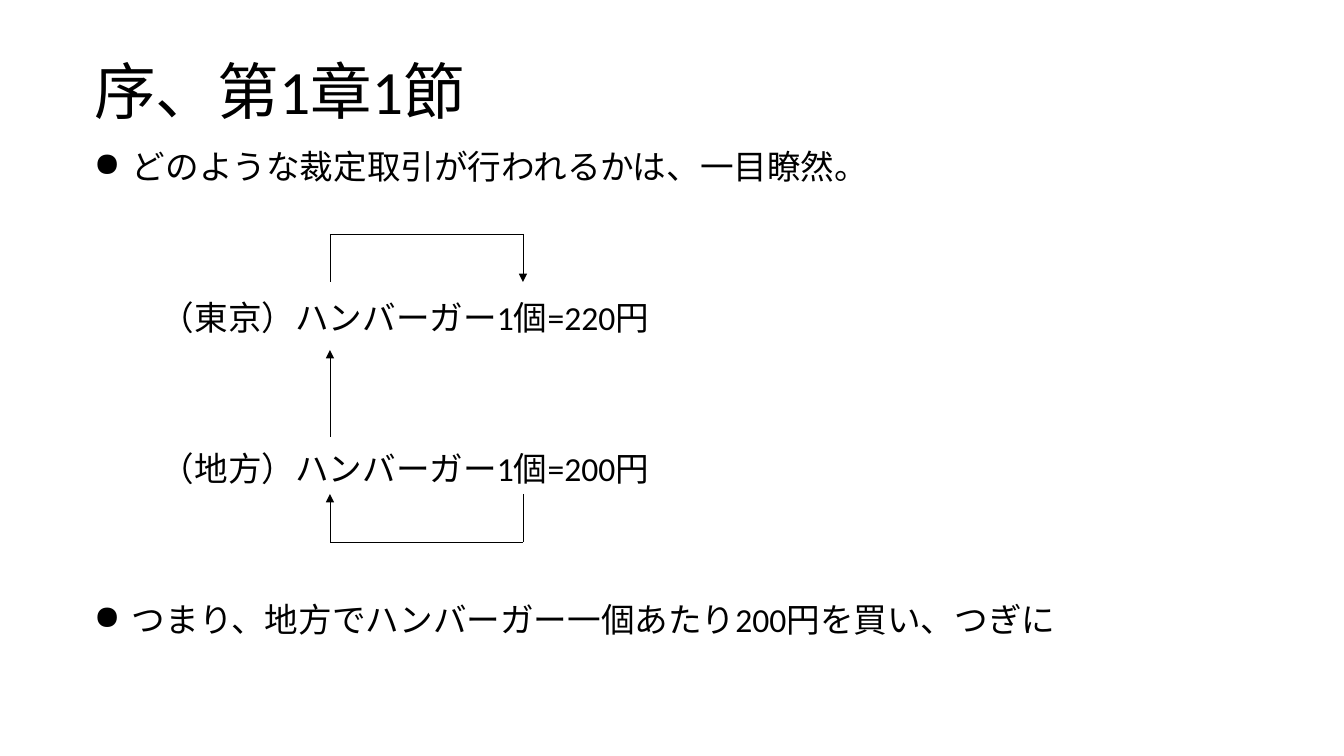
import itertools

import pptx
import pptx.dml.color
import pptx.enum.shapes
import pptx.enum.text
import pptx.oxml
import pptx.oxml.ns
import pptx.util

PX = 914400 / 100.8
BLACK = pptx.dml.color.RGBColor(0, 0, 0)
FONT = "Calibri"
BULLET_INDENT = 38
PRICE_INDENT = 67
LINES = [
    ("どのような裁定取引が行われるかは、一目瞭然。", True, 10),
    ("（東京）ハンバーガー1個=220円", False, 82),
    ("（地方）ハンバーガー1個=200円", False, 82),
    ("つまり、地方でハンバーガー一個あたり200円を買い、つぎに", True, 82),
]


def px(n):
    """Turn pixels into EMU."""
    return pptx.util.Emu(round(n * PX))


def add_xml(parent, tag, **attrs):
    """Append an empty DrawingML element with the given attributes."""
    el = pptx.oxml.parse_xml(f"<{tag} {pptx.oxml.ns.nsdecls('a')}/>")
    for name, value in attrs.items():
        el.set(name, str(value))
    parent.append(el)


def style_paragraph(p, text, size):
    """Fill a paragraph with black left-aligned text."""
    p.text = text
    p.alignment = pptx.enum.text.PP_ALIGN.LEFT
    p.line_spacing = 0.9
    p.font.name = FONT
    p.font.size = pptx.util.Pt(size)
    p.font.color.rgb = BLACK


def add_title(slide, x, y, w, h):
    """Place and format the title placeholder."""
    sp = slide.shapes.title
    sp.left, sp.top, sp.width, sp.height = map(px, (x, y, w, h))
    tf = sp.text_frame
    tf.auto_size = pptx.enum.text.MSO_AUTO_SIZE.NONE
    tf.vertical_anchor = pptx.enum.text.MSO_ANCHOR.MIDDLE
    style_paragraph(tf.paragraphs[0], "序、第1章1節", 44)


def add_body(slide, x, y, w, h):
    """Add the bulleted remarks and the indented price lines."""
    tf = slide.shapes.add_textbox(*map(px, (x, y, w, h))).text_frame
    tf.word_wrap = True
    for i, (text, bulleted, gap) in enumerate(LINES):
        p = tf.add_paragraph() if i else tf.paragraphs[0]
        style_paragraph(p, text, 24)
        p.space_before = pptx.util.Pt(gap)
        pPr = p._p.get_or_add_pPr()
        pPr.set("marL", str(px(BULLET_INDENT if bulleted else PRICE_INDENT)))
        pPr.set("indent", str(px(-BULLET_INDENT if bulleted else 0)))
        if bulleted:
            add_xml(pPr, "a:buChar", char="●")
            pPr.insert_element_before(pPr[-1], "a:defRPr")


def add_arrow_path(slide, points):
    """Join the points with thin lines, ending in an arrowhead."""
    for start, end in itertools.pairwise(points):
        line = slide.shapes.add_connector(
            pptx.enum.shapes.MSO_CONNECTOR.STRAIGHT, *map(px, start + end))
        line.line.color.rgb = BLACK
        line.line.width = pptx.util.Pt(0.5)
        if end == points[-1]:
            add_xml(line.line._get_or_add_ln(), "a:tailEnd", type="triangle")
        add_xml(line._element.spPr, "a:effectLst")


def add_arbitrage_arrows(slide, x, y, w, h):
    """Draw the trade cycle around the two price lines."""
    right, bottom, leg = x + w, y + h, 48
    add_arrow_path(slide, [(right, bottom - leg), (right, bottom),
                           (x, bottom), (x, bottom - leg)])
    add_arrow_path(slide, [(x, y + leg), (x, y), (right, y), (right, y + leg)])
    add_arrow_path(slide, [(x, y + 203), (x, y + 116)])


def main():
    """Build and save the slide."""
    prs = pptx.Presentation()
    prs.slide_width, prs.slide_height = px(1344), px(756)
    slide = prs.slides.add_slide(prs.slide_layouts[5])
    add_body(slide, 84, 145, 1171, 533)
    add_title(slide, 84, 46, 1171, 98)
    add_arbitrage_arrows(slide, 330, 234, 193, 308)
    prs.save("out.pptx")


if __name__ == "__main__":
    main()
